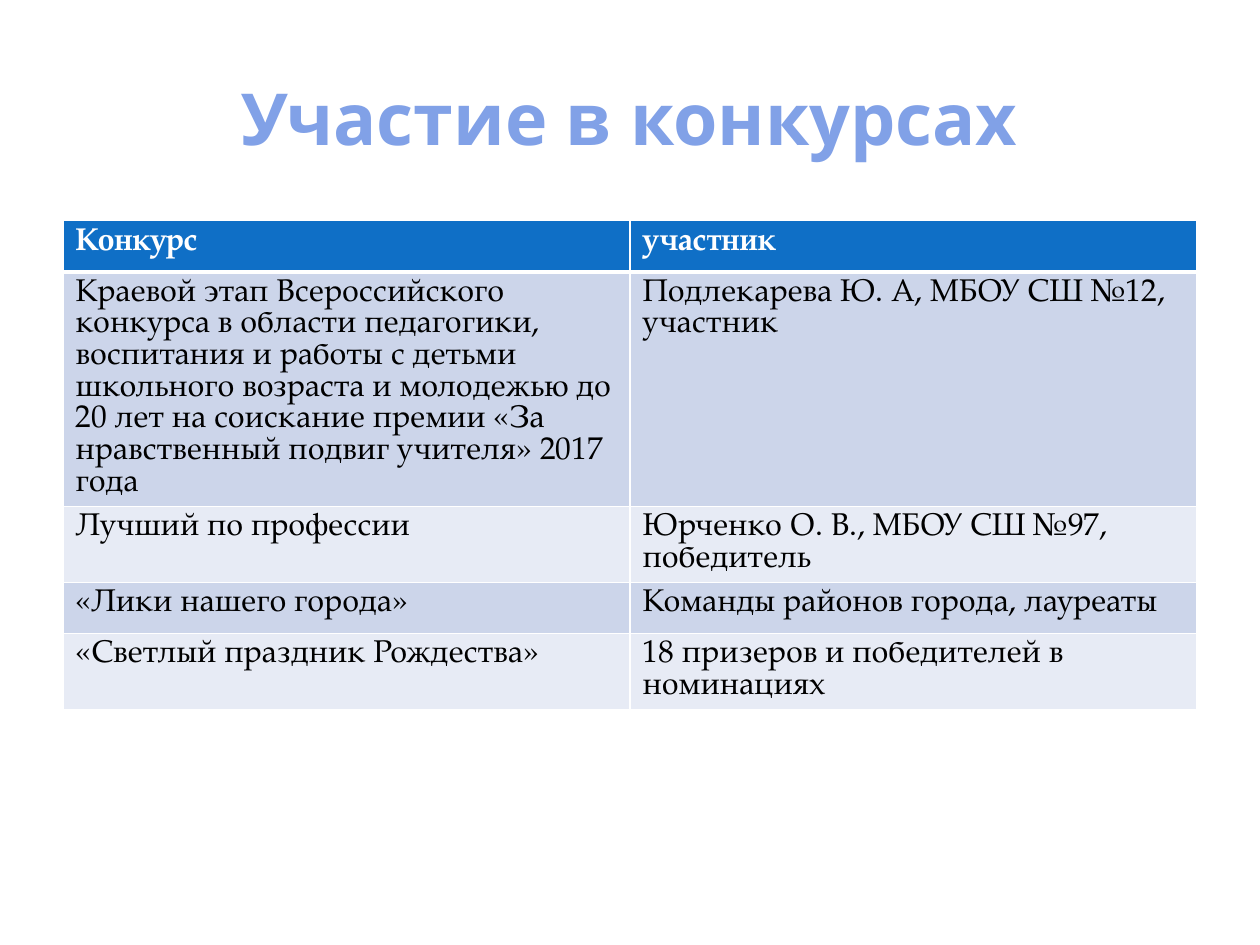
"""Build a slide with a title and a table of contests and their participants."""
from lxml.etree import SubElement
from pptx import Presentation
from pptx.dml.color import RGBColor
from pptx.enum.text import MSO_ANCHOR, PP_ALIGN
from pptx.oxml.ns import qn
from pptx.util import Cm, Pt


def rgb(value):
    return RGBColor.from_string(value)


def add_border(cell, side, width):
    ln = SubElement(cell._tc.get_or_add_tcPr(), qn(f"a:{side}"), w=str(Pt(width)))
    fill = SubElement(ln, qn("a:solidFill"))
    SubElement(fill, qn("a:srgbClr"), val="FFFFFF")


prs = Presentation()
prs.slide_width, prs.slide_height = Cm(25.4), Cm(19.05)
s = prs.slides.add_slide(prs.slide_layouts[6])

sp = s.shapes.add_textbox(Cm(1.27), Cm(0.76), Cm(22.86), Cm(3.18))
tf = sp.text_frame
tf.word_wrap = True
tf.vertical_anchor = MSO_ANCHOR.MIDDLE
tf.text = "Участие в конкурсах"
p = tf.paragraphs[0]
p.alignment = PP_ALIGN.CENTER
r = p.runs[0]
r.font.name, r.font.size, r.font.bold = "Open Sans", Pt(41), True
r.font.color.rgb = rgb("81A1E7")

rows = [
    ("Конкурс", "участник"),
    ("Краевой этап Всероссийского конкурса в области педагогики, воспитания "
     "и работы с детьми школьного возраста и молодежью до 20 лет на соискание "
     "премии «За нравственный подвиг учителя» 2017 года\u00a0",
     "Подлекарева Ю. А, МБОУ СШ №12, участник"),
    ("Лучший по профессии", "Юрченко О. В., МБОУ СШ №97, победитель"),
    ("«Лики нашего города»", "Команды районов города, лауреаты"),
    ("«Светлый праздник Рождества»", "18 призеров и победителей в номинациях"),
]
heights = [1.03, 4.73, 1.53, 1.03, 1.53]
fills = ["0F6FC6", "CCD5EA", "E7EBF5", "CCD5EA", "E7EBF5"]

table = s.shapes.add_table(
    len(rows), 2, Cm(1.27), Cm(4.45), Cm(22.86), Cm(sum(heights))
).table
for i, (texts, height, fill) in enumerate(zip(rows, heights, fills)):
    header = i == 0
    table.rows[i].height = Cm(height)
    for j, text in enumerate(texts):
        cell = table.cell(i, j)
        for side in ("lnL", "lnR", "lnT", "lnB"):
            thick = (i, side) in ((0, "lnB"), (1, "lnT"))
            add_border(cell, side, 3 if thick else 1)
        cell.fill.solid()
        cell.fill.fore_color.rgb = rgb(fill)
        cell.text_frame.text = text
        p = cell.text_frame.paragraphs[0]
        p.line_spacing = Pt(18.1)
        r = p.runs[0]
        r.font.name, r.font.size, r.font.bold = "TeX Gyre Pagella", Pt(18), header
        r.font.color.rgb = rgb("FFFFFF" if header else "000000")

prs.save("out.pptx")
